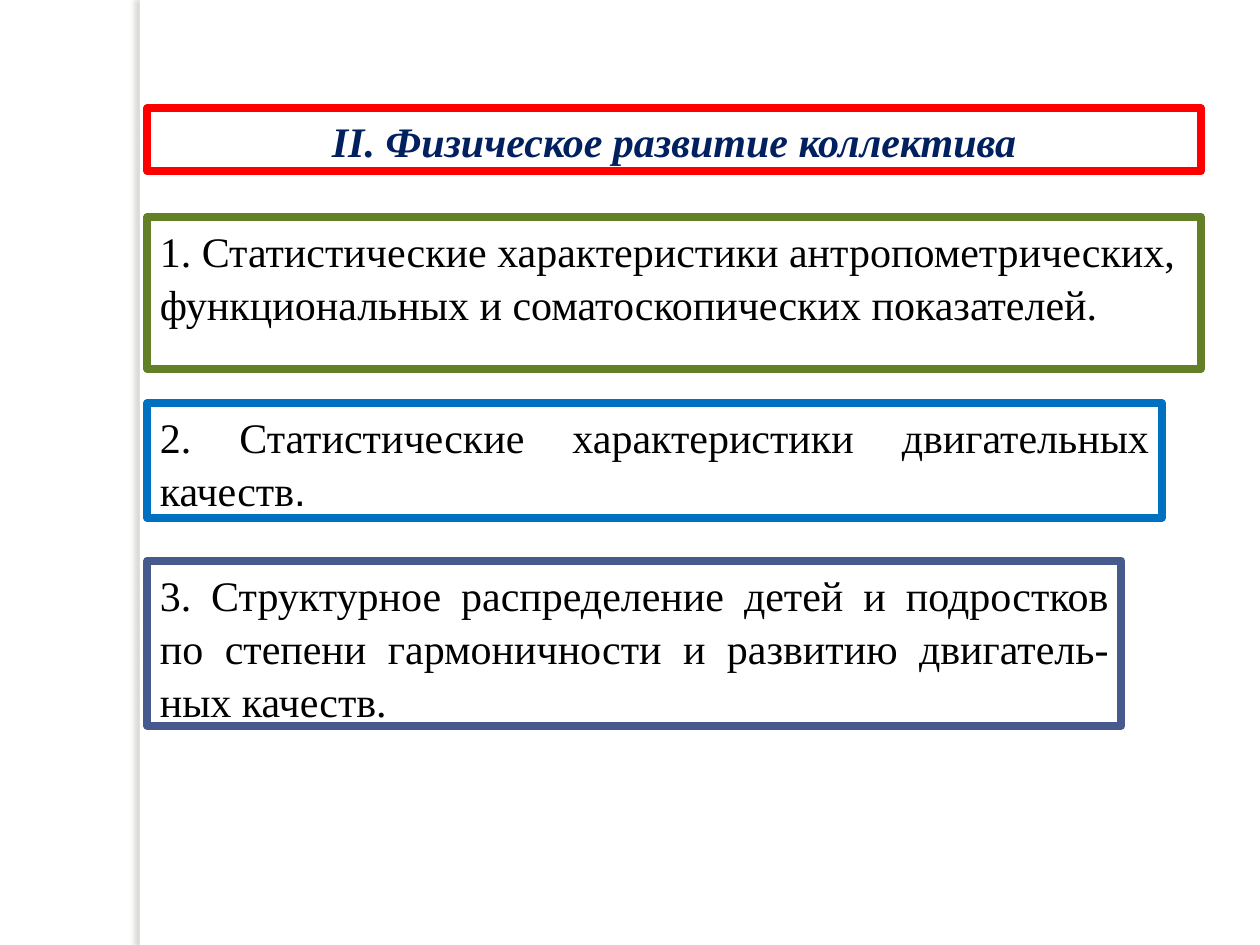
from lxml import etree
from pptx import Presentation
from pptx.dml.color import RGBColor
from pptx.enum import shapes, text
from pptx.oxml import parse_xml
from pptx.oxml.ns import nsdecls, qn
from pptx.util import Pt

ALIGN = text.PP_ALIGN
ANCHOR = text.MSO_ANCHOR


def rgb(value):
    return RGBColor.from_string(value)


class Deck:
    font, size, spacing = "Times New Roman", 24, 1.05
    border, left = 4.5, 84.24

    def __init__(self, width, height):
        self.prs = Presentation()
        self.prs.slide_width, self.prs.slide_height = Pt(width), Pt(height)
        self.s = self.prs.slides.add_slide(self.prs.slide_layouts[6])

    def rect(self, x, y, w, h, fill=None):
        sp = self.s.shapes.add_shape(
            shapes.MSO_SHAPE.RECTANGLE, Pt(x), Pt(y), Pt(w), Pt(h))
        sp.shadow.inherit = False
        sp.line.fill.background()
        if fill:
            sp.fill.solid()
            sp.fill.fore_color.rgb = rgb(fill)
        else:
            sp.fill.background()
        return sp

    def strip(self, x, w, h, shadow):
        """White vertical strip with a soft shadow to the left."""
        sp = self.rect(x, 0, w, h, "FFFFFF")
        effects = sp._element.spPr.find(qn("a:effectLst"))
        effects.append(parse_xml(
            f'<a:outerShdw {nsdecls("a")} blurRad="{Pt(3)}" dist="{Pt(3)}" '
            f'dir="10800000" rotWithShape="0"><a:srgbClr val="{shadow}">'
            '<a:alpha val="25000"/></a:srgbClr></a:outerShdw>'))

    def box(self, y, w, h, color, parts, align=ALIGN.LEFT, fill=None,
            anchor=ANCHOR.TOP, ink="000000", strong=False):
        """Framed text; parts are (wording, font) pairs."""
        sp = self.rect(self.left, y, w, h, fill)
        sp.line.color.rgb = rgb(color)
        sp.line.width = Pt(self.border)
        etree.SubElement(sp.line._get_or_add_ln(), qn("a:round"))
        tf = sp.text_frame
        tf.word_wrap = True
        tf.auto_size = text.MSO_AUTO_SIZE.SHAPE_TO_FIT_TEXT
        tf.vertical_anchor = anchor
        p = tf.paragraphs[0]
        p.alignment, p.line_spacing = align, self.spacing
        for wording, font in parts:
            r = p.add_run()
            r.text = wording
            r.font.name, r.font.size = font, Pt(self.size)
            r.font.color.rgb = rgb(ink)
            r.font.bold = r.font.italic = strong


def main():
    deck = Deck(720, 540)
    serif = deck.font

    # Side strip
    deck.strip(79.92, 5.76, 540, "736F63")

    # Heading
    deck.box(61.92, 601.92, 36, "FF0000",
             [("II. Физическое развитие коллектива", serif)],
             ALIGN.CENTER, "FFFFFF", ANCHOR.MIDDLE, "002060", True)

    # Numbered points
    deck.box(123.84, 601.92, 87.12, "638026",
             [("1. Статистические характеристики антропометрических, "
               "функциональных и соматоскопических показателей.", serif)])
    deck.box(230.4, 579.6, 65.52, "0070C0",
             [("2. Статистические характеристики двигательных качеств", serif),
              (".", "Arial")], ALIGN.JUSTIFY)
    deck.box(320.4, 556.56, 94.32, "475A8D",
             [("3. Структурное распределение детей и подростков по степени "
               "гармоничности и развитию двигатель-ных качеств.", serif)],
             ALIGN.JUSTIFY, "FFFFFF")

    deck.prs.save("out.pptx")


if __name__ == "__main__":
    main()
